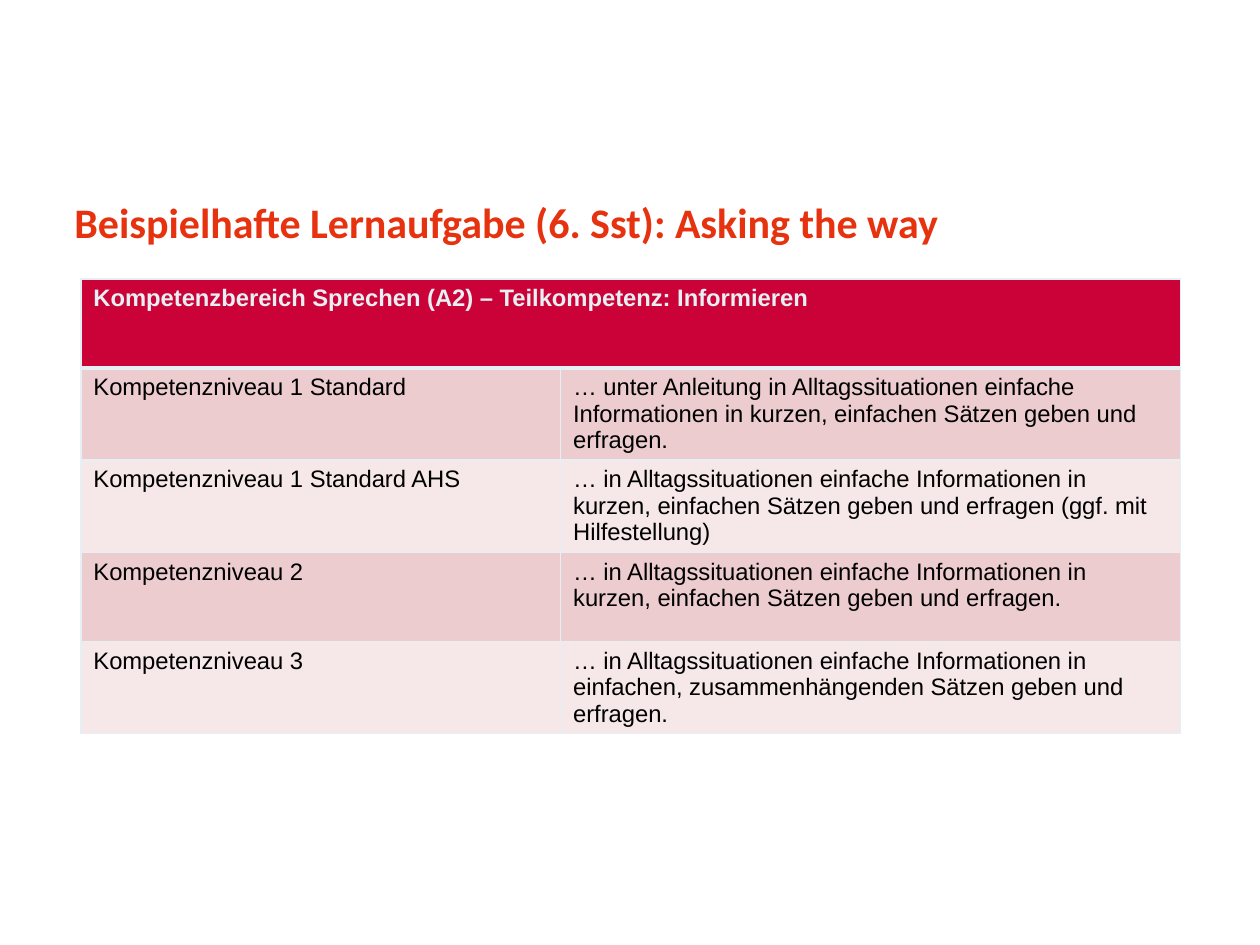
from lxml import etree
from pptx import Presentation
from pptx.dml.color import RGBColor
from pptx.enum.text import MSO_ANCHOR, PP_ALIGN
from pptx.oxml.ns import qn
from pptx.util import Cm, Pt

TOP = MSO_ANCHOR.TOP
LEFT = PP_ALIGN.LEFT
ORANGE = RGBColor(0xE6, 0x32, 0x0F)
RED = RGBColor(0xCA, 0x02, 0x37)
ROSE = RGBColor(0xEC, 0xCC, 0xCE)
PALE = RGBColor(0xF6, 0xE7, 0xE8)
ICE = RGBColor(0xE6, 0xEF, 0xF3)
BLACK = RGBColor(0, 0, 0)

TITLE = "Beispielhafte Lernaufgabe (6. Sst): Asking the way"
HEAD = "Kompetenzbereich Sprechen (A2) – Teilkompetenz: Informieren"
LEVELS = [
    ("Kompetenzniveau 1 Standard",
     "… unter Anleitung in Alltagssituationen einfache Informationen in "
     "kurzen, einfachen Sätzen geben und erfragen."),
    ("Kompetenzniveau 1 Standard AHS",
     "… in Alltagssituationen einfache Informationen in kurzen, einfachen "
     "Sätzen geben und erfragen (ggf. mit Hilfestellung)"),
    ("Kompetenzniveau 2",
     "… in Alltagssituationen einfache Informationen in kurzen, einfachen "
     "Sätzen geben und erfragen."),
    ("Kompetenzniveau 3",
     "… in Alltagssituationen einfache Informationen in einfachen, "
     "zusammenhängenden Sätzen geben und erfragen."),
]
WIDTHS = [Cm(9.67), Cm(12.5)]
ROW = Cm(1.8)


def style(font, name, size, color, bold):
    font.name = name
    font.size = Pt(size)
    font.color.rgb = color
    font.bold = bold


def add_title(slide):
    title = slide.shapes.title
    title.left, title.top = Cm(1.5), Cm(3.91)
    title.width, title.height = Cm(22.17), Cm(1.6)
    frame = title.text_frame
    frame.margin_left = frame.margin_right = 0
    frame.margin_top = frame.margin_bottom = 0
    frame.vertical_anchor = TOP
    frame.word_wrap = True
    frame.text = TITLE
    para = frame.paragraphs[0]
    para.alignment = LEFT
    para.line_spacing = Pt(30)
    style(para.font, "Calibri", 24, ORANGE, True)


def add_edges(cell, base):
    props = cell._tc.get_or_add_tcPr()
    for place, (side, width) in enumerate(
            [("L", 1), ("R", 1), ("T", 1), ("B", base)]):
        line = etree.Element(qn(f"a:ln{side}"), w=str(Pt(width)))
        fill = etree.SubElement(line, qn("a:solidFill"))
        etree.SubElement(fill, qn("a:srgbClr"), val=str(ICE))
        props.insert(place, line)


def fill_cell(cell, text, back, color=BLACK, bold=False):
    cell.text = text
    cell.fill.solid()
    cell.fill.fore_color.rgb = back
    style(cell.text_frame.paragraphs[0].font, "Arial", 13.6, color, bold)


def add_levels(slide):
    count = len(LEVELS) + 1
    frame = slide.shapes.add_table(
        count, 2, Cm(1.63), Cm(5.62), sum(WIDTHS), ROW * count)
    table = frame.table
    for column, width in zip(table.columns, WIDTHS):
        column.width = width
    for index, row in enumerate(table.rows):
        row.height = ROW
        for cell in row.cells:
            add_edges(cell, 1 if index else 3)
    head = table.cell(0, 0)
    head.merge(table.cell(0, 1))
    fill_cell(head, HEAD, RED, ICE, True)
    for index, level in enumerate(LEVELS, 1):
        back = ROSE if index % 2 else PALE
        for cell, text in zip(table.rows[index].cells, level):
            fill_cell(cell, text, back)


def main():
    deck = Presentation()
    deck.slide_width, deck.slide_height = Cm(25.4), Cm(19.05)
    slide = deck.slides.add_slide(deck.slide_layouts[5])
    add_title(slide)
    add_levels(slide)
    deck.save("out.pptx")


if __name__ == "__main__":
    main()
